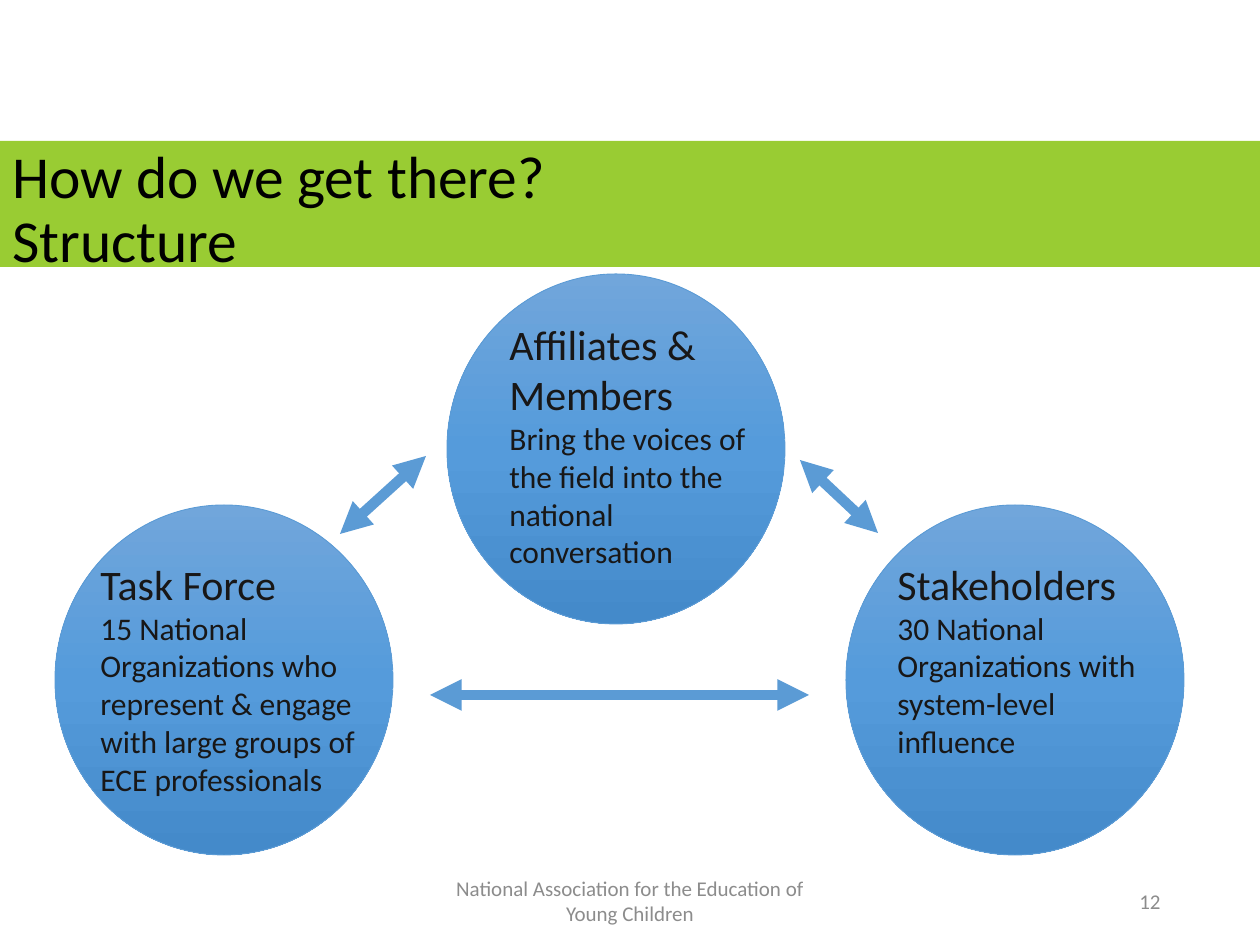
from copy import deepcopy

from lxml import etree
from pptx import Presentation
from pptx import util as u
from pptx.dml.color import RGBColor
from pptx.enum import shapes, text
from pptx.oxml.ns import qn

# Content: lengths in px, 126 px to the inch
TITLE = "How do we get there?\vStructure"
FOOTER = "National Association for the Education of Young Children"
PAGE = "12"
CIRCLE_W, CIRCLE_H = 338, 350
# circle corner, text box, heading, body
GROUPS = [
    ((846, 505), (885, 552, 285, 255), "Stakeholders",
     "30 National Organizations with system-level influence"),
    ((55, 505), (88, 552, 304, 255), "Task Force",
     "15 National Organizations who represent & engage with large groups "
     "of ECE professionals"),
    ((447, 274), (497, 312, 284, 267), "Affiliates & Members",
     "Bring the voices of the field into the national conversation"),
]
ARROWS = [(340, 534, 426, 456), (430, 695, 809, 695), (800, 460, 878, 533)]
GRADIENT = [(0, "71A6DB"), (0.5, "559BDB"), (1, "448ACA")]
BLUE, GREEN, INK, GRAY = "5B9BD5", "99CC33", "181717", "8C8C8C"


def px(*values):
    return [round(v * 914400 / 126) for v in values]


def rgb(value):
    return RGBColor.from_string(value)


def style(p, size, color, align=text.PP_ALIGN.LEFT):
    p.alignment = align
    for r in p.runs:
        r.font.name = "Calibri"
        r.font.size = u.Pt(size)
        r.font.color.rgb = rgb(color)


def add_text(s, box, lines, color, align=text.PP_ALIGN.LEFT,
             anchor=text.MSO_ANCHOR.TOP):
    tf = s.shapes.add_textbox(*px(*box)).text_frame
    tf.word_wrap = True
    tf.vertical_anchor = anchor
    tf.text = "\n".join(line for line, _ in lines)
    for p, (_, size) in zip(tf.paragraphs, lines):
        style(p, size, color, align)


def add_circle(s, corner):
    sp = s.shapes.add_shape(shapes.MSO_SHAPE.OVAL,
                            *px(*corner, CIRCLE_W, CIRCLE_H))
    sp.shadow.inherit = False
    sp.line.color.rgb = rgb(BLUE)
    sp.line.width = u.Pt(0.5)
    sp.fill.gradient()
    sp.fill.gradient_angle = 270
    stops = next(sp._element.iter(qn("a:gsLst")))
    stops.append(deepcopy(stops[-1]))
    for stop, (position, color) in zip(sp.fill.gradient_stops, GRADIENT):
        stop.position = position
        stop.color.rgb = rgb(color)


def add_arrow(s, ends):
    line = s.shapes.add_connector(shapes.MSO_CONNECTOR.STRAIGHT, *px(*ends))
    line.line.color.rgb = rgb(BLUE)
    line.line.width = u.Pt(6)
    ln = line.line._get_or_add_ln()
    for tag in ("a:headEnd", "a:tailEnd"):
        etree.SubElement(ln, qn(tag), type="triangle")
    etree.SubElement(line._element.spPr, qn("a:effectLst"))


def main():
    prs = Presentation()
    prs.slide_width, prs.slide_height = px(1260, 945)
    s = prs.slides.add_slide(prs.slide_layouts[6])

    # Title band
    sp = s.shapes.add_shape(shapes.MSO_SHAPE.RECTANGLE, *px(0, 141, 1260, 126))
    sp.shadow.inherit = False
    sp.fill.solid()
    sp.fill.fore_color.rgb = rgb(GREEN)
    sp.line.fill.background()
    tf = sp.text_frame
    tf.vertical_anchor = text.MSO_ANCHOR.TOP
    tf.text = TITLE
    tf.paragraphs[0].line_spacing = 0.9
    style(tf.paragraphs[0], 34, "000000")

    # Footer and page number
    middle = text.MSO_ANCHOR.MIDDLE
    add_text(s, (417, 876, 426, 50), [(FOOTER, 12)], GRAY,
             text.PP_ALIGN.CENTER, middle)
    add_text(s, (890, 876, 283, 50), [(PAGE, 12)], GRAY,
             text.PP_ALIGN.RIGHT, middle)

    # Circles with their texts, and the arrows between them
    for corner, box, heading, body in GROUPS:
        add_circle(s, corner)
        add_text(s, box, [(heading, 24), (body, 18)], INK)
    for ends in ARROWS:
        add_arrow(s, ends)

    prs.save("out.pptx")


if __name__ == "__main__":
    main()
